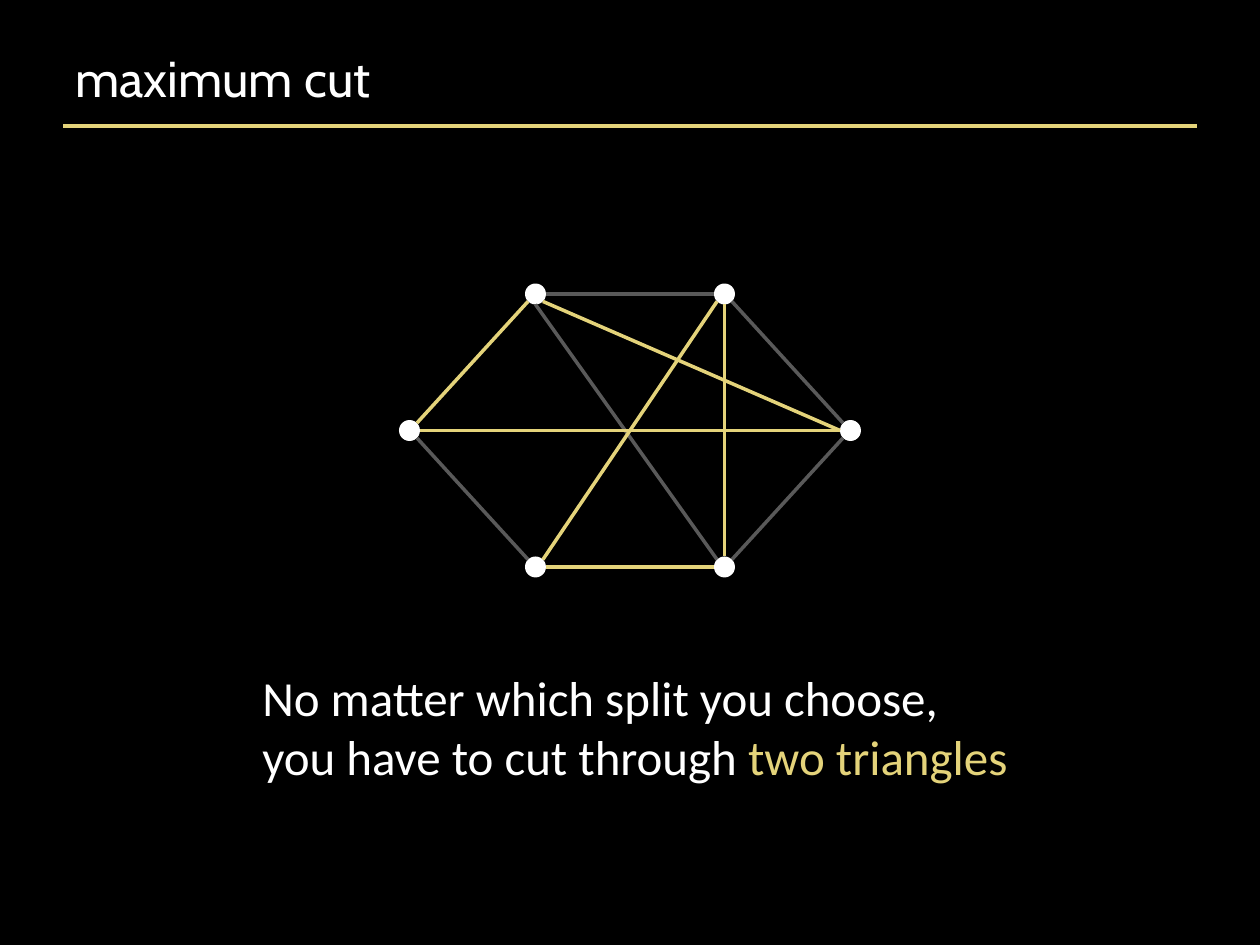
from dataclasses import dataclass
from math import cos, radians, sin

from lxml.etree import SubElement
from pptx import Presentation
from pptx.dml.color import RGBColor
from pptx.enum.shapes import MSO_CONNECTOR, MSO_SHAPE
from pptx.enum.text import MSO_ANCHOR, MSO_AUTO_SIZE
from pptx.oxml.ns import qn
from pptx.util import Pt


@dataclass(frozen=True)
class Theme:
    background: RGBColor = RGBColor(0x00, 0x00, 0x00)
    text: RGBColor = RGBColor(0xFF, 0xFF, 0xFF)
    accent: RGBColor = RGBColor(0xE4, 0xD3, 0x7A)
    muted: RGBColor = RGBColor(0x59, 0x59, 0x59)
    title_font: str = "Cabin"
    body_font: str = "Calibri"
    title_size: float = 28.8
    body_size: float = 28
    line_width: float = 2


THEME = Theme()
NODE_RADIUS = 6

# Centres of the graph's nodes
NODES = {
    "top left": (306, 168),
    "left": (234, 246),
    "bottom left": (306, 324),
    "bottom right": (414, 324),
    "top right": (414, 168),
    "right": (486, 246),
}

# Each edge: node and angle on its rim (clockwise from the right), twice
CUT_EDGES = [
    ("top right", 90, "bottom right", 270),
    ("bottom left", 0, "bottom right", 180),
    ("left", 315, "top left", 135),
    ("left", 0, "right", 180),
    ("top left", 45, "right", 180),
    ("top right", 135, "bottom left", 315),
]
OTHER_EDGES = [
    ("top left", 0, "top right", 180),
    ("left", 45, "bottom left", 225),
    ("top right", 45, "right", 225),
    ("top left", 90, "bottom right", 225),
    ("bottom right", 315, "right", 135),
]


def add_line(slide, start, end, color):
    points = [Pt(value) for value in (*start, *end)]
    line = slide.shapes.add_connector(MSO_CONNECTOR.STRAIGHT, *points)
    line.line.color.rgb = color
    line.line.width = Pt(THEME.line_width)
    SubElement(line._element.spPr, qn("a:effectLst"))


def add_node(slide, center):
    x, y = center
    size = Pt(2 * NODE_RADIUS)
    node = slide.shapes.add_shape(
        MSO_SHAPE.OVAL, Pt(x - NODE_RADIUS), Pt(y - NODE_RADIUS), size, size)
    node.shadow.inherit = False
    node.fill.solid()
    node.fill.fore_color.rgb = THEME.text
    node.line.fill.background()


def rim_point(node, angle):
    x, y = NODES[node]
    turn = radians(angle)
    return x + NODE_RADIUS * cos(turn), y + NODE_RADIUS * sin(turn)


def add_edges(slide, edges, color):
    for start, start_angle, end, end_angle in edges:
        add_line(slide, rim_point(start, start_angle),
                 rim_point(end, end_angle), color)


def add_text(slide, box, paragraphs, font, size):
    """Each paragraph is a list of (text, color) runs."""
    shape = slide.shapes.add_textbox(*[Pt(value) for value in box])
    frame = shape.text_frame
    for index, runs in enumerate(paragraphs):
        paragraph = frame.add_paragraph() if index else frame.paragraphs[0]
        for text, color in runs:
            run = paragraph.add_run()
            run.text = text
            run.font.name = font
            run.font.size = Pt(size)
            run.font.color.rgb = color
    return frame


def main():
    presentation = Presentation()
    presentation.slide_width, presentation.slide_height = Pt(720), Pt(540)
    slide = presentation.slides.add_slide(presentation.slide_layouts[6])
    slide.background.fill.solid()
    slide.background.fill.fore_color.rgb = THEME.background

    # Heading and rule
    add_line(slide, (36, 72), (684, 72), THEME.accent)
    title = add_text(slide, (36, 21.6, 648, 45), [[("maximum cut", THEME.text)]],
                     THEME.title_font, THEME.title_size)
    title.word_wrap = True
    title.vertical_anchor = MSO_ANCHOR.MIDDLE

    # Conclusion
    conclusion = add_text(
        slide, (142.8, 378, 445, 75),
        [[("No matter which split you choose,", THEME.text)],
         [("you have to cut through ", THEME.text),
          ("two triangles", THEME.accent)]],
        THEME.body_font, THEME.body_size)
    conclusion.word_wrap = False
    conclusion.auto_size = MSO_AUTO_SIZE.SHAPE_TO_FIT_TEXT

    # Graph
    for center in NODES.values():
        add_node(slide, center)
    add_edges(slide, OTHER_EDGES, THEME.muted)
    add_edges(slide, CUT_EDGES, THEME.accent)

    presentation.save("out.pptx")


if __name__ == "__main__":
    main()
